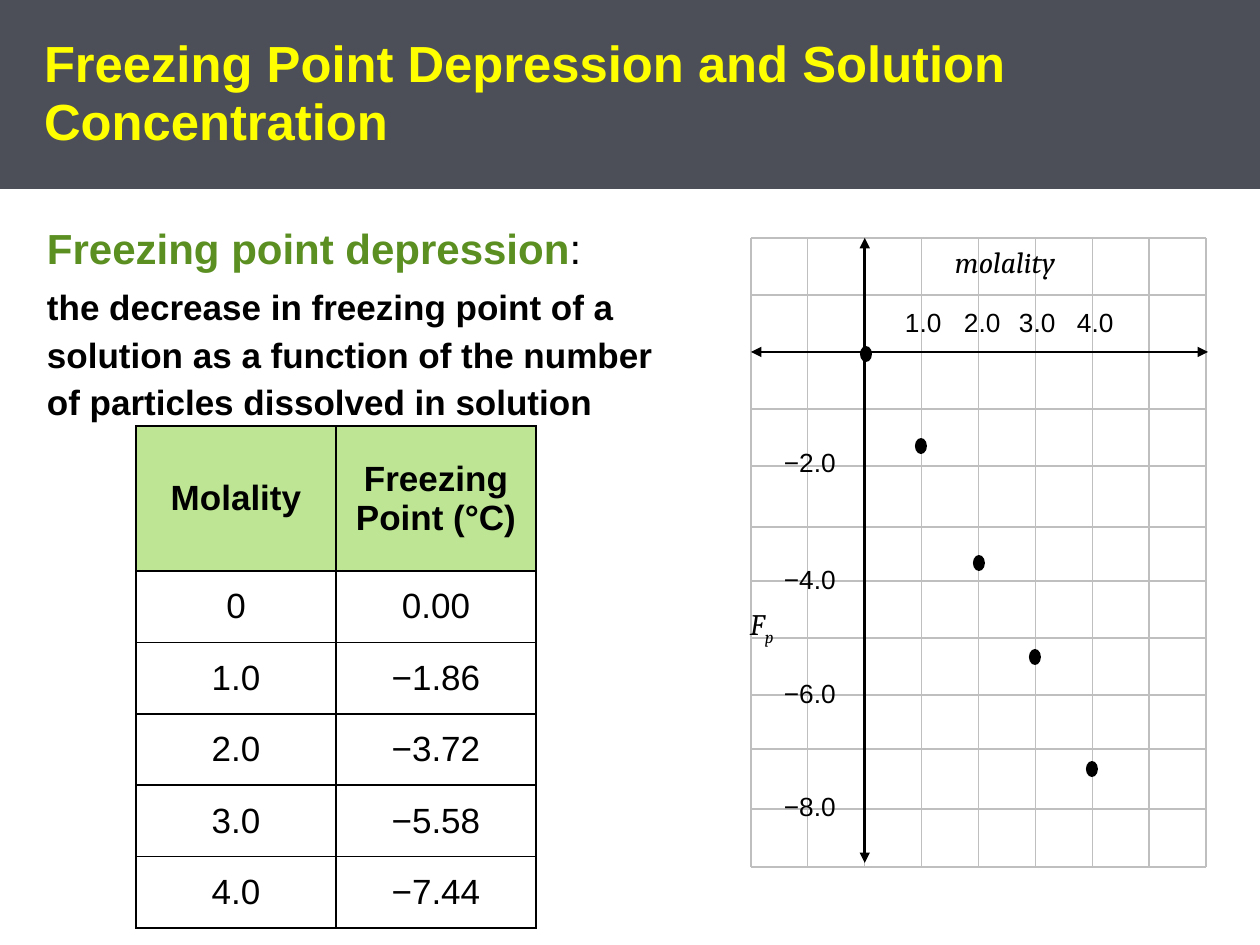
"""Build the slide on freezing point depression with its data table and graph."""
from lxml.etree import SubElement
from pptx import Presentation
from pptx.dml.color import RGBColor
from pptx.enum.shapes import MSO_CONNECTOR, MSO_SHAPE
from pptx.enum.text import MSO_ANCHOR, MSO_AUTO_SIZE, PP_ALIGN
from pptx.oxml import parse_xml
from pptx.oxml.ns import nsdecls, qn
from pptx.util import Emu, Pt

PX = 914400 / 126
THEME = {
    "banner": RGBColor.from_string("4D4F58"),
    "title": RGBColor.from_string("FFFF00"),
    "term": RGBColor.from_string("5B8F22"),
    "header": RGBColor.from_string("BEE593"),
    "grid": RGBColor.from_string("BFBFBF"),
    "ink": RGBColor.from_string("000000"),
    "sans": "Arial", "serif": "Cambria",
    "title_size": Pt(29), "term_size": Pt(24), "text_size": Pt(20),
    "axis_size": Pt(17), "tick_size": Pt(15),
    "grid_width": Pt(0.75), "axis_width": Pt(1.5),
}


def px(*lengths):
    return [Emu(round(length * PX)) for length in lengths]


def set_font(font, size, color, name=THEME["sans"], bold=False, italic=False):
    font.name, font.size, font.bold, font.italic = name, size, bold, italic
    font.color.rgb = color


deck = Presentation()
deck.slide_width, deck.slide_height = px(1260, 945)
page = deck.slides.add_slide(deck.slide_layouts[1])
ink = THEME["ink"]

title, body = page.shapes.title, page.placeholders[1]
for box, place, insets, anchor in (
    (title, (0, 0, 1260, 189), (44, 19, 44, 19), MSO_ANCHOR.MIDDLE),
    (body, (0, 190, 693, 755), (47, 26, 0, 26), MSO_ANCHOR.TOP),
):
    box.left, box.top, box.width, box.height = px(*place)
    frame = box.text_frame
    frame.margin_left, frame.margin_top, frame.margin_right, frame.margin_bottom = px(*insets)
    frame.vertical_anchor = anchor
    frame.auto_size = MSO_AUTO_SIZE.NONE
    frame.word_wrap = True

title.fill.solid()
title.fill.fore_color.rgb = THEME["banner"]
title.text_frame.text = "Freezing Point Depression and Solution Concentration"
heading = title.text_frame.paragraphs[0]
heading.alignment = PP_ALIGN.LEFT
heading.line_spacing = 0.95
set_font(heading.font, THEME["title_size"], THEME["title"], bold=True)

term = body.text_frame.paragraphs[0]
for text, color, bold in (("Freezing point depression", THEME["term"], True), (":", ink, False)):
    span = term.add_run()
    span.text = text
    set_font(span.font, THEME["term_size"], color, bold=bold)
definition = body.text_frame.add_paragraph()
definition.text = (
    "the decrease in freezing point of a solution as a function "
    "of the number of particles dissolved in solution"
)
set_font(definition.font, THEME["text_size"], ink, bold=True)
for para in (term, definition):
    para.line_spacing = 1.13
    para.space_before = Pt(4.2)
    properties = para._p.get_or_add_pPr()
    properties.set("marL", "0")
    properties.set("indent", "0")
    SubElement(properties, qn("a:buNone"))

records = (
    ("Molality", "Freezing Point (°C)"),
    ("0", "0.00"),
    ("1.0", "−1.86"),
    ("2.0", "−3.72"),
    ("3.0", "−5.58"),
    ("4.0", "−7.44"),
)
table = page.shapes.add_table(len(records), 2, *px(136, 426, 400, 502)).table
table.first_row = table.horz_banding = False
for column in table.columns:
    column.width = px(200)[0]
for index, record in enumerate(records):
    is_header = index == 0
    table.rows[index].height = px(145 if is_header else 71.4)[0]
    for cell, text in zip(table.rows[index].cells, record):
        cell.text = text
        cell.vertical_anchor = MSO_ANCHOR.MIDDLE
        cell.margin_left, cell.margin_right, cell.margin_top, cell.margin_bottom = px(19, 19, 9, 9)
        if is_header:
            cell.fill.solid()
            cell.fill.fore_color.rgb = THEME["header"]
        else:
            cell.fill.background()
        para = cell.text_frame.paragraphs[0]
        para.alignment = PP_ALIGN.CENTER
        set_font(para.font, THEME["text_size"], ink, bold=is_header)
        for order, side in enumerate(("lnL", "lnR", "lnT", "lnB")):
            border = parse_xml(
                f'<a:{side} {nsdecls("a")} w="12700"><a:solidFill>'
                f'<a:srgbClr val="{ink}"/></a:solidFill></a:{side}>'
            )
            cell._tc.get_or_add_tcPr().insert(order, border)

left, right, top, bottom = 751, 1206, 238, 867
grid_columns = [left + (right - left) * step / 8 for step in range(9)]
grid_rows = (top, 295, 352, 409, 466, 527, 581, 638, 695, 749, 809, bottom)
origin_x, origin_y = grid_columns[2], grid_rows[2]
lines = [(x, top, x, bottom, False) for x in grid_columns]
lines += [(left, y, right, y, False) for y in grid_rows]
lines += [(left, origin_y, 1208, origin_y, True), (origin_x, top, origin_x, 863, True)]
for *ends, is_axis in lines:
    line = page.shapes.add_connector(MSO_CONNECTOR.STRAIGHT, *px(*ends))
    line.line.color.rgb = ink if is_axis else THEME["grid"]
    line.line.width = THEME["axis_width"] if is_axis else THEME["grid_width"]
    if is_axis:
        for end in ("a:headEnd", "a:tailEnd"):
            SubElement(line.line._ln, qn(end)).set("type", "triangle")
    SubElement(line._element.spPr, qn("a:effectLst"))

ticks = [("1.0", 905, 306), ("2.0", 964, 306), ("3.0", 1019, 306), ("4.0", 1077, 306)]
ticks += [("−2.0", 784, 446), ("−4.0", 784, 563), ("−6.0", 784, 677), ("−8.0", 784, 790)]
labels = [(*tick, 53 if tick[0].startswith("−") else 37, 32, False) for tick in ticks]
labels += [("molality", 955, 244, 113, 37, True), ("F", 750, 606, 29, 37, True)]
for text, x, y, width, height, is_name in labels:
    label = page.shapes.add_textbox(*px(x, y, width, height))
    frame = label.text_frame
    frame.margin_left = frame.margin_top = frame.margin_right = frame.margin_bottom = 0
    frame.word_wrap = False
    frame.auto_size = MSO_AUTO_SIZE.SHAPE_TO_FIT_TEXT
    para = frame.paragraphs[0]
    para.add_run().text = text
    if text == "F":
        span = para.add_run()
        span.text = "p"
        span._r.get_or_add_rPr().set("baseline", "-25000")
    if is_name:
        set_font(para.font, THEME["axis_size"], ink, THEME["serif"], italic=True)
    else:
        set_font(para.font, THEME["tick_size"], ink)

for x, y in ((860, 346), (915, 438), (973, 555), (1029, 649), (1086, 761)):
    point = page.shapes.add_shape(MSO_SHAPE.OVAL, *px(x, y, 12, 16))
    point.shadow.inherit = False
    point.fill.solid()
    point.fill.fore_color.rgb = ink
    point.line.fill.background()

deck.save("out.pptx")
